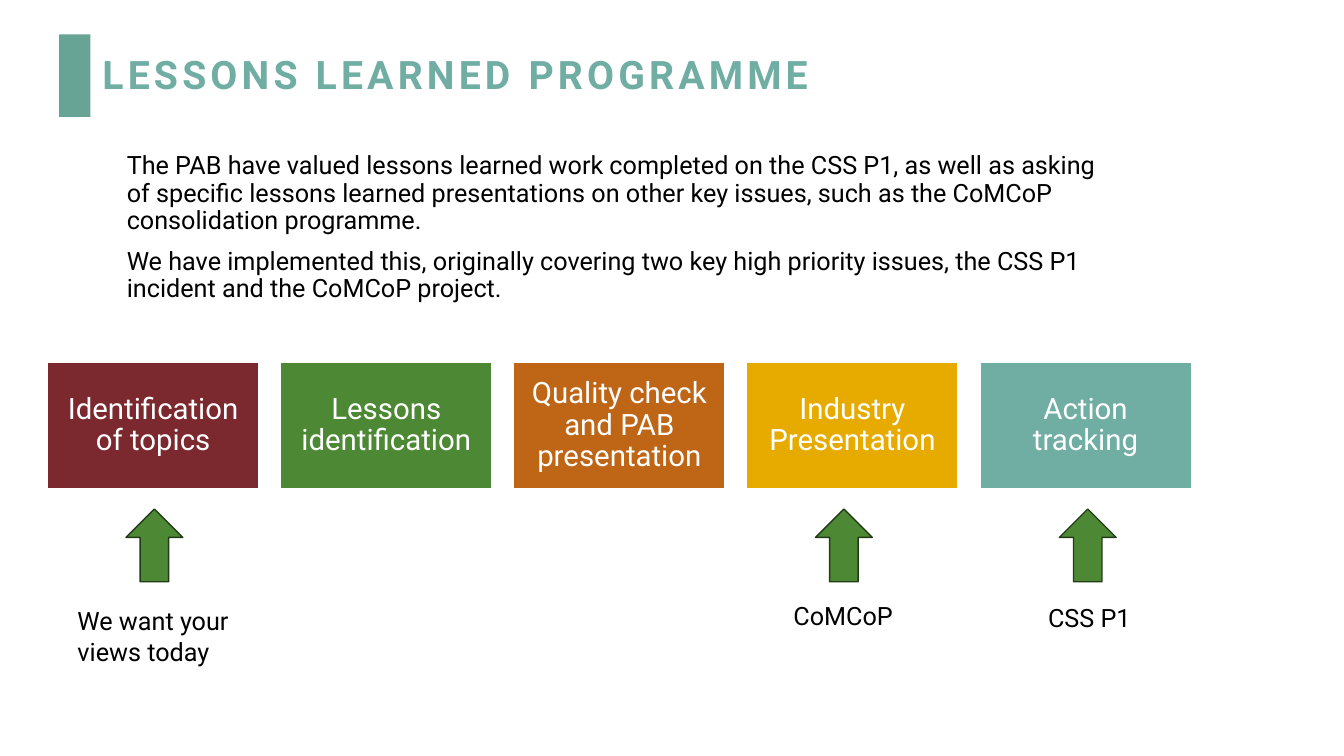
from pptx import Presentation
from pptx.dml.color import RGBColor
from pptx.enum import shapes, text
from pptx.util import Pt

FONT = "Roboto"
TEAL, GREEN, WHITE, BLACK = "70ADA3", "4D8934", "FFFFFF", "000000"
STAGES = [
    ("Identification of topics", "7B282E"),
    ("Lessons identification", GREEN),
    ("Quality check and PAB presentation", "BE6516"),
    ("Industry Presentation", "E7AB00"),
    ("Action tracking", TEAL),
]
# arrow left; label text, left, top, width, height, alignment
MARKERS = [
    (90, "We want your views today", 48.24, 429.1, 164.9, 51, text.PP_ALIGN.LEFT),
    (582.5, "CoMCoP", 519.8, 425.5, 164.9, 29, text.PP_ALIGN.CENTER),
    (756.7, "CSS P1", 741.6, 427, 79.2, 29, text.PP_ALIGN.LEFT),
]


def colour(value):
    return RGBColor.from_string(value)


def add_block(page, kind, left, top, width, height, fill, line=None):
    block = page.shapes.add_shape(kind, Pt(left), Pt(top), Pt(width), Pt(height))
    block.shadow.inherit = False
    block.fill.solid()
    block.fill.fore_color.rgb = colour(fill)
    if line:
        block.line.color.rgb = colour(line)
        block.line.width = Pt(1)
    else:
        block.line.fill.background()
    return block


def write(box, lines, size, ink, align=text.PP_ALIGN.LEFT, spacing=None, gap=0):
    """Fill a shape with paragraphs, gap points apart, and return its spans."""
    frame = box.text_frame
    frame.word_wrap = True
    spans = []
    for index, line in enumerate(lines):
        para = frame.add_paragraph() if index else frame.paragraphs[0]
        para.alignment = align
        if spacing:
            para.line_spacing = spacing
        if index:
            para.space_before = Pt(gap)
        span = para.add_run()
        span.text = line
        span.font.name = FONT
        span.font.size = Pt(size)
        span.font.color.rgb = colour(ink)
        spans.append(span)
    return spans


def add_text(page, left, top, width, height):
    return page.shapes.add_textbox(Pt(left), Pt(top), Pt(width), Pt(height))


def add_heading(page, left, top):
    add_block(page, shapes.MSO_SHAPE.RECTANGLE, left, top, 22.3, 59, "68A495")
    box = add_text(page, left + 23.8, top + 4.3, 730.8, 51.8)
    box.text_frame.vertical_anchor = text.MSO_ANCHOR.MIDDLE
    span = write(box, ["LESSONS LEARNED PROGRAMME"], 28, TEAL, spacing=0.9)[0]
    span.font.bold = True
    span.font._element.set("spc", "300")


def add_introduction(page, left, top, width, height):
    write(add_text(page, left, top, width, height), [
        "The PAB have valued lessons learned work completed on the CSS P1, as well as "
        "asking of specific lessons learned presentations on other key issues, such as "
        "the CoMCoP consolidation programme.",
        "We have implemented this, originally covering two key high priority issues, "
        "the CSS P1 incident and the CoMCoP project.",
    ], 18, BLACK, spacing=0.9, gap=10)


def add_stages(page, left, top, width, height, step):
    for index, (label, fill) in enumerate(STAGES):
        box = add_block(page, shapes.MSO_SHAPE.RECTANGLE, left + index * step, top,
                        width, height, fill, WHITE)
        frame = box.text_frame
        frame.margin_left = frame.margin_right = Pt(6.3)
        frame.margin_top = frame.margin_bottom = Pt(6.3)
        frame.vertical_anchor = text.MSO_ANCHOR.MIDDLE
        write(box, [label], 21, WHITE, text.PP_ALIGN.CENTER, 0.9)


def add_markers(page, top):
    for arrow_left, label, left, label_top, width, height, align in MARKERS:
        add_block(page, shapes.MSO_SHAPE.UP_ARROW, arrow_left, top, 40.6, 52,
                  GREEN, "223C17")
        write(add_text(page, left, label_top, width, height), [label], 18, BLACK, align)


def main():
    deck = Presentation()
    deck.slide_width, deck.slide_height = Pt(960), Pt(540)
    page = deck.slides.add_slide(deck.slide_layouts[6])
    add_heading(page, 42.3, 24.5)
    add_introduction(page, 83.5, 105.8, 717.1, 125.3)
    add_stages(page, 33.9, 258.7, 151, 90.6, 166.5)
    add_markers(page, 363.6)
    deck.save("out.pptx")


if __name__ == "__main__":
    main()
